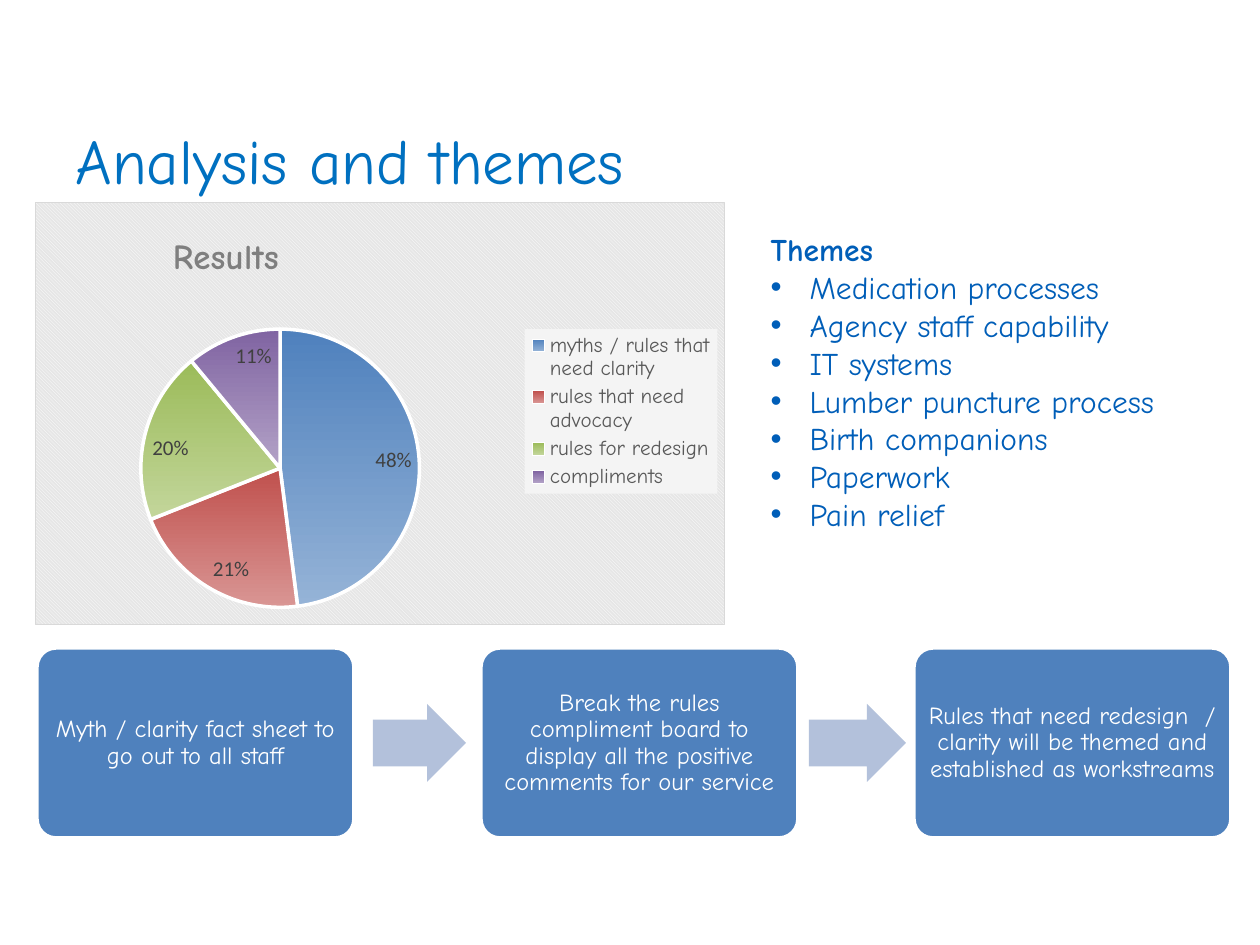
import lxml.etree
import pptx
import pptx.chart.data
import pptx.dml.color
import pptx.enum.chart
import pptx.enum.shapes
import pptx.enum.text
import pptx.oxml
import pptx.oxml.ns
import pptx.util

SCALE = 914400 / 126  # EMU per px
FONT = "Comic Neue"
COLORS = {
    "title": "0070C0", "themes": "005EB8", "box": "4F81BD", "arrow": "B3C1DB",
    "white": "FFFFFF", "chart title": "7F7F7F", "legend": "595959", "label": "404040",
    "legend fill": "F4F4F4", "chart back": "E6E6E6", "chart border": "D9D9D9",
}
RESULTS = [  # category, value, top colour, bottom colour
    ("myths / rules that need clarity", 48, "4F81BD", "95B3D7"),
    ("rules that need advocacy", 21, "C0504D", "D99694"),
    ("rules for redesign", 20, "9BBB59", "C3D69B"),
    ("compliments", 11, "8064A2", "B3A2C7"),
]
THEMES = ["Themes", "Medication processes", "Agency staff capability", "IT systems",
          "Lumber puncture process", "Birth companions", "Paperwork", "Pain relief"]
STEPS = [
    (37, "Myth / clarity fact sheet to go out to all staff"),
    (481, "Break the rules compliment board to display all the positive comments for our service"),
    (914, "Rules that need redesign  / clarity will be themed and established as workstreams"),
]
ARROWS = [(373, 93), (809, 97)]


def px(*lengths):
    return [pptx.util.Emu(round(length * SCALE)) for length in lengths]


def style(font, size, color, bold=False, name=FONT):
    font.name, font.size, font.bold = name, pptx.util.Pt(size), bold
    font.color.rgb = pptx.dml.color.RGBColor.from_string(COLORS[color])


presentation = pptx.Presentation()
presentation.slide_width, presentation.slide_height = px(1260, 945)
slide = presentation.slides.add_slide(presentation.slide_layouts[1])

# Title
title = slide.shapes.title
title.left, title.top, title.width, title.height = px(63, 117, 1110, 84)
title.text_frame.text = "Analysis and themes"
title.text_frame.auto_size = pptx.enum.text.MSO_AUTO_SIZE.NONE
paragraph = title.text_frame.paragraphs[0]
paragraph.alignment = pptx.enum.text.PP_ALIGN.LEFT
style(paragraph.font, 36, "title")

# Themes list
themes = slide.placeholders[1]
themes.left, themes.top, themes.width, themes.height = px(758, 224, 428, 394)
themes.text_frame.text = "\n".join(THEMES)
themes.text_frame.auto_size = pptx.enum.text.MSO_AUTO_SIZE.NONE
for index, paragraph in enumerate(themes.text_frame.paragraphs):
    heading = index == 0
    indent = 0 if heading else px(39)[0]
    properties = paragraph._p.get_or_add_pPr()
    properties.set("marL", str(indent))
    properties.set("indent", str(-indent))
    bullet = lxml.etree.SubElement(
        properties, pptx.oxml.ns.qn("a:buNone" if heading else "a:buChar"))
    if not heading:
        bullet.set("char", "•")
    paragraph.space_before = pptx.util.Pt(0)
    style(paragraph.font, 18, "themes", bold=heading)

# Results pie
chart_data = pptx.chart.data.CategoryChartData()
chart_data.categories = [result[0] for result in RESULTS]
chart_data.add_series("Series 1", [result[1] for result in RESULTS])
chart = slide.shapes.add_chart(
    pptx.enum.chart.XL_CHART_TYPE.PIE, *px(35, 202, 690, 423), chart_data).chart
chart.font.name, chart.font.size = "Calibri", pptx.util.Pt(10)
chart.has_title = True
chart.chart_title.text_frame.text = "Results"
style(chart.chart_title.text_frame.paragraphs[0].font, 20, "chart title", bold=True)
chart.has_legend = True
chart.legend.position = pptx.enum.chart.XL_LEGEND_POSITION.RIGHT
chart.legend.include_in_layout = False
style(chart.legend.font, 12, "legend")

plot = chart.plots[0]
plot.vary_by_categories = True
plot.has_data_labels = True
labels = plot.data_labels
labels.show_percentage, labels.show_value = True, False
labels.number_format, labels.number_format_is_linked = "0%", False
labels.position = pptx.enum.chart.XL_LABEL_POSITION.INSIDE_END
style(labels.font, 12, "label", name="Calibri")
for index, (_, _, *shades) in enumerate(RESULTS):
    wedge = plot.series[0].points[index].format
    wedge.fill.gradient()
    wedge.fill.gradient_angle = 270
    for stop, shade in zip(wedge.fill.gradient_stops, shades):
        stop.color.rgb = pptx.dml.color.RGBColor.from_string(shade)
    wedge.line.width = pptx.util.Pt(2)
    wedge.line.color.rgb = pptx.dml.color.RGBColor.from_string(COLORS["white"])

# Fixed places inside the chart, as fractions of its size
space = chart._chartSpace
namespaces = pptx.oxml.ns.nsdecls("c", "a")
LAYOUTS = [
    ("c:title", {"x": 0.19, "y": 0.06}),
    ("c:plotArea", {"x": 0.15, "y": 0.3, "w": 0.41, "h": 0.66}),
    ("c:legend", {"x": 0.71, "y": 0.3, "w": 0.28, "h": 0.39}),
]
for tag, fractions in LAYOUTS:
    part = space.chart.find(pptx.oxml.ns.qn(tag))
    for old in part.findall(pptx.oxml.ns.qn("c:layout")):
        part.remove(old)
    target = '<c:layoutTarget val="inner"/>' if tag == "c:plotArea" else ""
    modes = "".join(f'<c:{key}Mode val="edge"/>' for key in "xy")
    values = "".join(f'<c:{key} val="{value}"/>' for key, value in fractions.items())
    layout = pptx.oxml.parse_xml(
        f"<c:layout {namespaces}><c:manualLayout>{target}{modes}{values}"
        "</c:manualLayout></c:layout>")
    part.insert(0 if tag == "c:plotArea" else 1, layout)

space.chart.addnext(pptx.oxml.parse_xml(
    f'<c:spPr {namespaces}><a:pattFill prst="dkDnDiag">'
    f'<a:fgClr><a:srgbClr val="{COLORS["white"]}"/></a:fgClr>'
    f'<a:bgClr><a:srgbClr val="{COLORS["chart back"]}"/></a:bgClr></a:pattFill>'
    f'<a:ln w="9525"><a:solidFill><a:srgbClr val="{COLORS["chart border"]}"/>'
    "</a:solidFill></a:ln></c:spPr>"))
legend_text = chart.legend._element.find(pptx.oxml.ns.qn("c:txPr"))
legend_text.addprevious(pptx.oxml.parse_xml(
    f'<c:spPr {namespaces}><a:solidFill><a:srgbClr val="{COLORS["legend fill"]}"/>'
    "</a:solidFill></c:spPr>"))

# Next steps
for left, text in STEPS:
    box = slide.shapes.add_shape(
        pptx.enum.shapes.MSO_SHAPE.ROUNDED_RECTANGLE, *px(left, 648, 317, 190))
    box.adjustments[0] = 0.1
    box.shadow.inherit = False
    box.fill.solid()
    box.fill.fore_color.rgb = pptx.dml.color.RGBColor.from_string(COLORS["box"])
    box.line.color.rgb = pptx.dml.color.RGBColor.from_string(COLORS["white"])
    box.line.width = pptx.util.Pt(2)
    frame = box.text_frame
    frame.word_wrap = True
    frame.vertical_anchor = pptx.enum.text.MSO_ANCHOR.MIDDLE
    frame.margin_left, frame.margin_top, frame.margin_right, frame.margin_bottom = px(8, 8, 8, 8)
    frame.text = text
    paragraph = frame.paragraphs[0]
    paragraph.alignment = pptx.enum.text.PP_ALIGN.CENTER
    paragraph.line_spacing = 0.9
    style(paragraph.font, 14, "white")

for left, width in ARROWS:
    arrow = slide.shapes.add_shape(
        pptx.enum.shapes.MSO_SHAPE.RIGHT_ARROW, *px(left, 704, width, 78))
    arrow.adjustments[0], arrow.adjustments[1] = 0.6, 0.5
    arrow.shadow.inherit = False
    arrow.fill.solid()
    arrow.fill.fore_color.rgb = pptx.dml.color.RGBColor.from_string(COLORS["arrow"])
    arrow.line.fill.background()

presentation.save("out.pptx")
